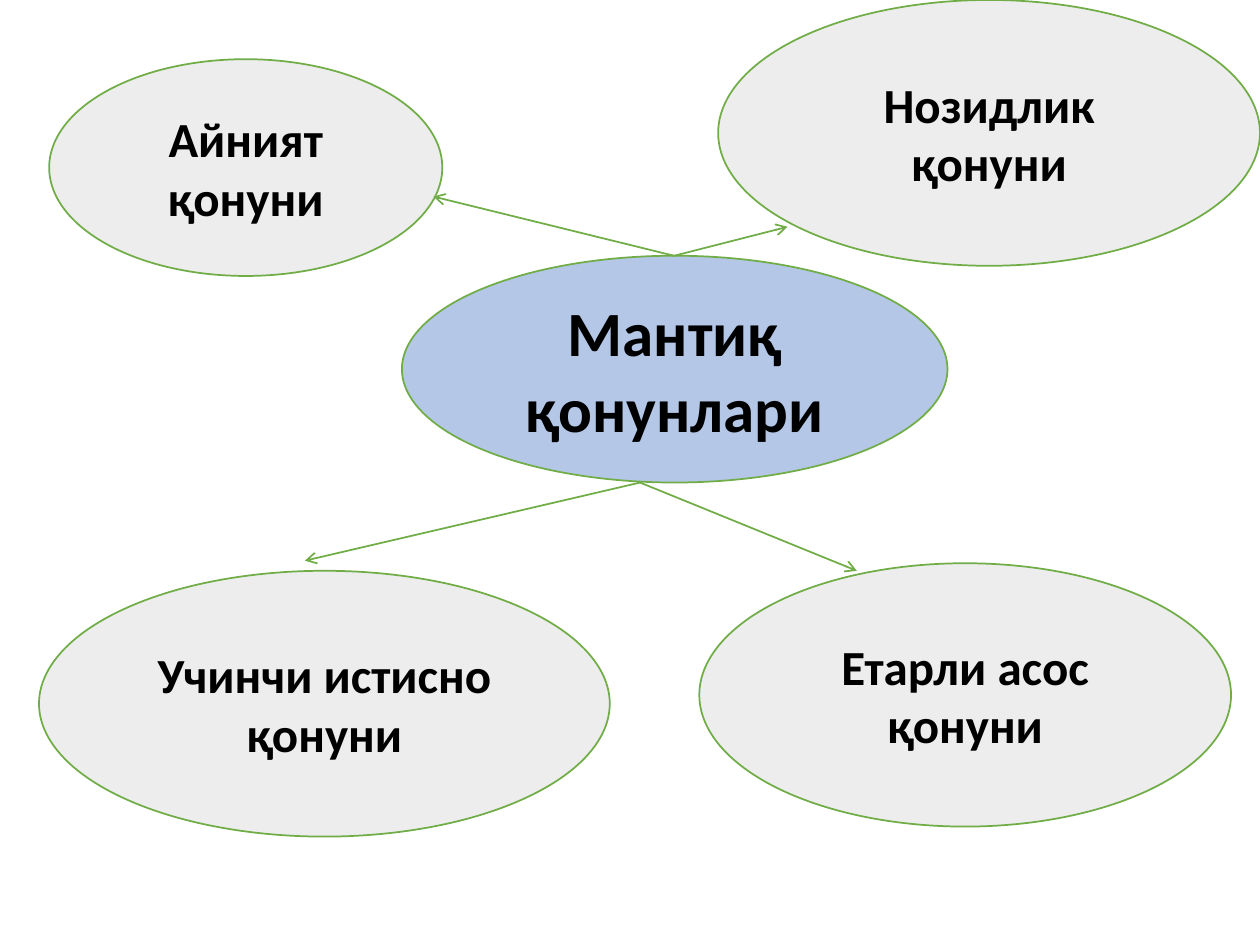
import pptx
import pptx.dml.color
import pptx.enum.shapes
import pptx.enum.text
import pptx.oxml
import pptx.oxml.ns
import pptx.util

Inches = pptx.util.Inches
GREEN = "70AD47"
GRAY = "EDEDED"
BLUE = "B4C7E7"
BLACK = "000000"


def paint(color, code):
    color.rgb = pptx.dml.color.RGBColor.from_string(code)


def outline(line):
    line.width = pptx.util.Pt(1)
    line.fill.solid()
    paint(line.color, GREEN)


def add_oval(slide, text, box, fill=GRAY, size=28):
    oval = slide.shapes.add_shape(
        pptx.enum.shapes.MSO_SHAPE.OVAL, *map(Inches, box))
    oval.shadow.inherit = False
    oval.fill.solid()
    paint(oval.fill.fore_color, fill)
    outline(oval.line)
    frame = oval.text_frame
    frame.word_wrap = True
    frame.vertical_anchor = pptx.enum.text.MSO_ANCHOR.MIDDLE
    label = frame.paragraphs[0]
    label.text = text
    label.alignment = pptx.enum.text.PP_ALIGN.CENTER
    label.font.name = "Calibri"
    label.font.size = pptx.util.Pt(size)
    label.font.bold = True
    paint(label.font.color, BLACK)


def add_arrow(slide, start, end):
    arrow = slide.shapes.add_connector(
        pptx.enum.shapes.MSO_CONNECTOR.STRAIGHT, *map(Inches, start + end))
    outline(arrow.line)
    tip = pptx.oxml.parse_xml(
        f'<a:tailEnd {pptx.oxml.ns.nsdecls("a")} type="arrow"/>')
    arrow.line._get_or_add_ln().append(tip)
    plain = pptx.oxml.parse_xml(
        f'<a:effectLst {pptx.oxml.ns.nsdecls("a")}/>')
    arrow._element.spPr.append(plain)


def main():
    deck = pptx.Presentation()
    deck.slide_width = Inches(10)
    deck.slide_height = Inches(7.5)
    slide = deck.slides.add_slide(deck.slide_layouts[6])

    add_oval(slide, "Мантиқ қонунлари", (3.19, 2.03, 4.33, 1.8), BLUE, 36)
    laws = [
        ("Айният қонуни", (0.39, 0.47, 3.12, 1.72)),
        ("Учинчи истисно қонуни", (0.31, 4.53, 4.53, 2.11)),
        ("Нозидлик қонуни", (5.7, 0, 4.3, 2.11)),
        ("Етарли асос қонуни", (5.55, 4.47, 4.22, 2.09)),
    ]
    for text, box in laws:
        add_oval(slide, text, box)

    top, bottom = (5.35, 2.03), (5.08, 3.83)
    arrows = [
        (top, (6.25, 1.8)),
        (top, (3.44, 1.56)),
        (bottom, (6.8, 4.53)),
        (bottom, (2.42, 4.45)),
    ]
    for start, end in arrows:
        add_arrow(slide, start, end)

    deck.save("out.pptx")


if __name__ == "__main__":
    main()
